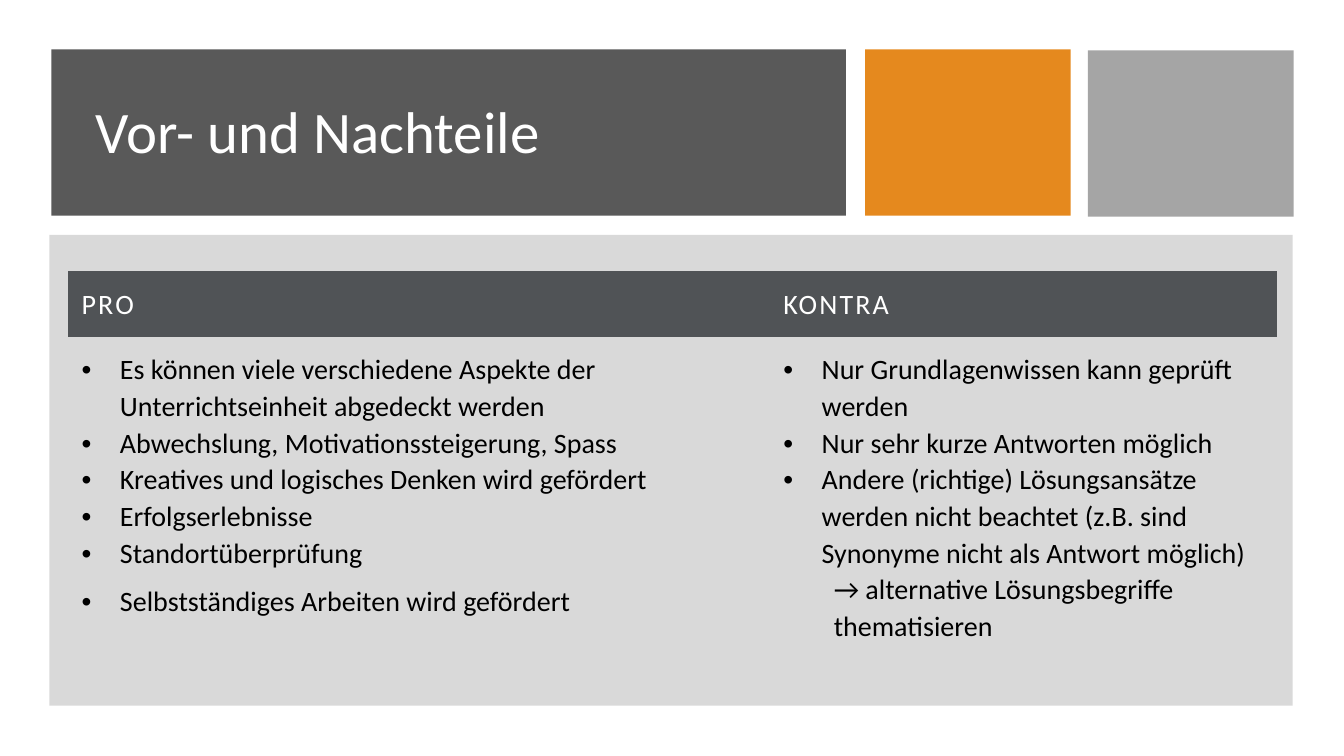
from lxml.etree import SubElement
from pptx import Presentation
from pptx.dml.color import RGBColor
from pptx.enum.shapes import MSO_SHAPE
from pptx.enum.text import MSO_ANCHOR
from pptx.oxml.ns import qn
from pptx.util import Inches, Pt

COLORS = {
    "title_bar": "595959",
    "orange": "E48312",
    "grey": "A5A5A5",
    "panel": "D9D9D9",
    "header": "505356",
    "white": "FFFFFF",
    "black": "000000",
}
FONT = "Calibri"
NO_GRID_STYLE = "{2D5ABB26-0587-4C30-8999-92F81FD0307C}"
COLUMN_WIDTHS = (6.96, 5.04)
ROW_HEIGHTS = (0.65, 3.79)
HEADERS = ("PRO", "KONTRA")
PRO = [
    ("Es können viele verschiedene Aspekte der Unterrichtseinheit abgedeckt werden", 0),
    ("Abwechslung, Motivationssteigerung, Spass", 0),
    ("Kreatives und logisches Denken wird gefördert", 0),
    ("Erfolgserlebnisse", 0),
    ("Standortüberprüfung", 8),
    ("Selbstständiges Arbeiten wird gefördert", 8),
]
KONTRA = [
    ("Nur Grundlagenwissen kann geprüft werden", 0),
    ("Nur sehr kurze Antworten möglich", 0),
    ("Andere (richtige) Lösungsansätze werden nicht beachtet "
     "(z.B. sind Synonyme nicht als Antwort möglich)", 0),
]
CONSEQUENCE = "→ alternative Lösungsbegriffe thematisieren"


def rgb(name):
    return RGBColor.from_string(COLORS[name])


def add_block(slide, left, top, width, height, color, opacity=100):
    shape = slide.shapes.add_shape(
        MSO_SHAPE.RECTANGLE, Inches(left), Inches(top), Inches(width), Inches(height))
    shape.shadow.inherit = False
    shape.fill.solid()
    shape.fill.fore_color.rgb = rgb(color)
    shape.line.fill.background()
    if opacity < 100:
        fill_color = shape._element.spPr.find(qn("a:solidFill"))[0]
        SubElement(fill_color, qn("a:alpha"), val=str(opacity * 1000))


def add_run(paragraph, text, size, color, tracking=0):
    run = paragraph.add_run()
    run.text = text
    run.font.size = Pt(size)
    run.font.name = FONT
    run.font.color.rgb = rgb(color)
    run.font.bold = False
    if tracking:
        run._r.get_or_add_rPr().set("spc", str(round(tracking * 100)))


def add_title(slide, text):
    box = slide.shapes.add_textbox(Inches(0.85), Inches(0.76), Inches(7.23), Inches(1.14))
    frame = box.text_frame
    frame.word_wrap = True
    frame.vertical_anchor = MSO_ANCHOR.MIDDLE
    paragraph = frame.paragraphs[0]
    paragraph.line_spacing = 0.9
    add_run(paragraph, text, 42, "white")


def add_table(slide):
    frame = slide.shapes.add_table(
        2, 2, Inches(0.67), Inches(2.69), Inches(sum(COLUMN_WIDTHS)), Inches(sum(ROW_HEIGHTS)))
    table = frame.table
    table.horz_banding = False
    table._tbl.tblPr.find(qn("a:tableStyleId")).text = NO_GRID_STYLE
    for column, width in zip(table.columns, COLUMN_WIDTHS):
        column.width = Inches(width)
    for row, height in zip(table.rows, ROW_HEIGHTS):
        row.height = Inches(height)
    for cell in table.iter_cells():
        cell.margin_left = cell.margin_right = Inches(0.14)
        cell.margin_top = cell.margin_bottom = Inches(0.14)
        cell.fill.background()
    return table


def next_paragraph(frame, space_after):
    paragraph = frame.paragraphs[0]
    if paragraph.runs:
        paragraph = frame.add_paragraph()
    paragraph.line_spacing = 1.07
    paragraph.space_after = Pt(space_after)
    return paragraph


def indent(paragraph, left, first_line=0):
    properties = paragraph._p.get_or_add_pPr()
    properties.set("marL", str(Inches(left)))
    properties.set("indent", str(Inches(first_line)))
    return properties


def fill_header(cell, text):
    cell.fill.solid()
    cell.fill.fore_color.rgb = rgb("header")
    add_run(next_paragraph(cell.text_frame, 8), text, 20, "white", tracking=1.5)


def fill_bullets(cell, items):
    for text, space_after in items:
        paragraph = next_paragraph(cell.text_frame, space_after)
        properties = indent(paragraph, 0.38, -0.38)
        SubElement(properties, qn("a:buFont"), typeface="Arial")
        SubElement(properties, qn("a:buChar"), char="•")
        add_run(paragraph, text, 20, "black")


def main():
    presentation = Presentation()
    presentation.slide_width = Inches(13.33)
    presentation.slide_height = Inches(7.5)
    slide = presentation.slides.add_slide(presentation.slide_layouts[6])

    add_block(slide, 0.51, 0.49, 7.88, 1.65, "title_bar")
    add_title(slide, "Vor- und Nachteile")
    add_block(slide, 8.58, 0.49, 2.04, 1.65, "orange", opacity=95)
    add_block(slide, 10.79, 0.5, 2.04, 1.65, "grey")
    add_block(slide, 0.49, 2.33, 12.33, 4.67, "panel")

    table = add_table(slide)
    for column, (header, items) in enumerate(zip(HEADERS, (PRO, KONTRA))):
        fill_header(table.cell(0, column), header)
        fill_bullets(table.cell(1, column), items)
    consequence = next_paragraph(table.cell(1, 1).text_frame, 8)
    indent(consequence, 0.5)
    add_run(consequence, CONSEQUENCE, 20, "black")

    presentation.save("out.pptx")


if __name__ == "__main__":
    main()
